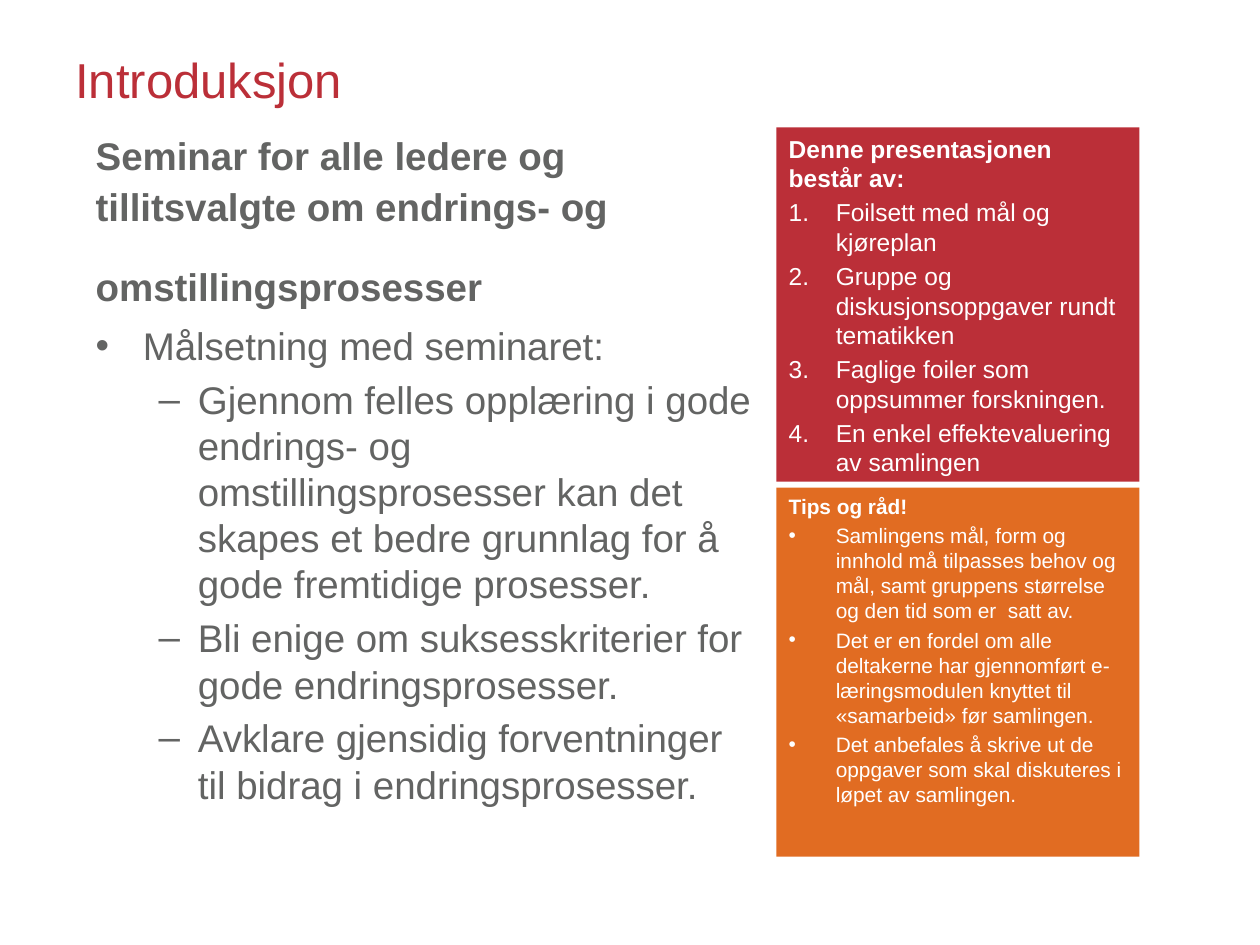
from lxml.etree import SubElement
from pptx import Presentation
from pptx.dml.color import RGBColor
from pptx.enum.shapes import MSO_SHAPE as Shape
from pptx.enum.text import MSO_ANCHOR as Anchor, PP_ALIGN as Align
from pptx.oxml.ns import qn
from pptx.util import Cm, Pt

COLORS = {"red": "BB2F38", "orange": "E16C22", "gray": "636463", "white": "FFFFFF"}
FIRST_LEVEL = (0.95, -0.95)
SECOND_LEVEL = (2.06, -0.79)


class SeminarSlide:
    font = "Arial"

    def __init__(self, presentation):
        self.slide = presentation.slides.add_slide(presentation.slide_layouts[6])

    def style(self, run, size, color, bold=False):
        run.font.name = self.font
        run.font.size = Pt(size)
        run.font.bold = bold
        run.font.color.rgb = RGBColor.from_string(COLORS[color])

    def paragraph(self, frame, text, size, color, bold=False, bullet=None, indent=FIRST_LEVEL):
        is_first = not frame.text
        line = frame.paragraphs[0] if is_first else frame.add_paragraph()
        line.text = text
        line.alignment = Align.LEFT
        line.space_before = Pt(0 if is_first else round(size * 0.2, 1))
        if bullet:
            properties = line._p.get_or_add_pPr()
            margin, hanging = indent
            properties.set("marL", str(Cm(margin)))
            properties.set("indent", str(Cm(hanging)))
            if bullet == "1.":
                SubElement(properties, qn("a:buAutoNum"), type="arabicPeriod")
            else:
                SubElement(properties, qn("a:buFont"), typeface=self.font)
                SubElement(properties, qn("a:buChar"), char=bullet)
        for run in line.runs:
            self.style(run, size, color, bold)
        return line

    def text_box(self, left, top, width, height, anchor=Anchor.TOP):
        frame = self.slide.shapes.add_textbox(Cm(left), Cm(top), Cm(width), Cm(height)).text_frame
        frame.word_wrap = True
        frame.vertical_anchor = anchor
        return frame

    def panel(self, top, height, fill, size, heading, bullet, items):
        box = self.slide.shapes.add_shape(
            Shape.RECTANGLE, Cm(15.65), Cm(top), Cm(7.32), Cm(height))
        box.shadow.inherit = False
        box.fill.solid()
        box.fill.fore_color.rgb = RGBColor.from_string(COLORS[fill])
        box.line.fill.background()
        frame = box.text_frame
        frame.word_wrap = True
        frame.vertical_anchor = Anchor.TOP
        self.paragraph(frame, heading, size, "white", bold=True)
        for item in items:
            self.paragraph(frame, item, size, "white", bullet=bullet)


def main():
    presentation = Presentation()
    presentation.slide_width = Cm(25.4)
    presentation.slide_height = Cm(19.05)
    seminar = SeminarSlide(presentation)

    title = seminar.text_box(1.27, 0.76, 22.86, 1.65, Anchor.MIDDLE)
    seminar.paragraph(title, "Introduksjon", 28, "red")

    body = seminar.text_box(1.68, 2.44, 13.72, 14.4)
    lead = seminar.paragraph(
        body,
        "Seminar for alle ledere og tillitsvalgte om endrings- og omstillingsprosesser",
        22, "gray", bold=True)
    lead.line_spacing = 1.1
    tall_space = lead.add_run()
    tall_space.text = " "
    seminar.style(tall_space, 37, "gray")
    seminar.paragraph(body, "Målsetning med seminaret:", 22, "gray", bullet="•")
    goals = [
        "Gjennom felles opplæring i gode endrings- og omstillingsprosesser kan det "
        "skapes et bedre grunnlag for å gode fremtidige prosesser.",
        "Bli enige om suksesskriterier for gode endringsprosesser.",
        "Avklare gjensidig forventninger til bidrag i endringsprosesser.",
    ]
    for goal in goals:
        seminar.paragraph(body, goal, 22, "gray", bullet="–", indent=SECOND_LEVEL)

    seminar.panel(2.57, 7.14, "red", 14, "Denne presentasjonen består av:", "1.", [
        "Foilsett med mål og kjøreplan",
        "Gruppe og diskusjonsoppgaver rundt tematikken",
        "Faglige foiler som oppsummer forskningen.",
        "En enkel effektevaluering av samlingen",
    ])
    seminar.panel(9.83, 7.44, "orange", 11.9, "Tips og råd!", "•", [
        "Samlingens mål, form og innhold må tilpasses behov og mål, samt gruppens "
        "størrelse og den tid som er  satt av.",
        "Det er en fordel om alle deltakerne har gjennomført e-læringsmodulen knyttet "
        "til «samarbeid» før samlingen.",
        "Det anbefales å skrive ut de oppgaver som skal diskuteres i løpet av samlingen.",
    ])
    presentation.save("out.pptx")


if __name__ == "__main__":
    main()
